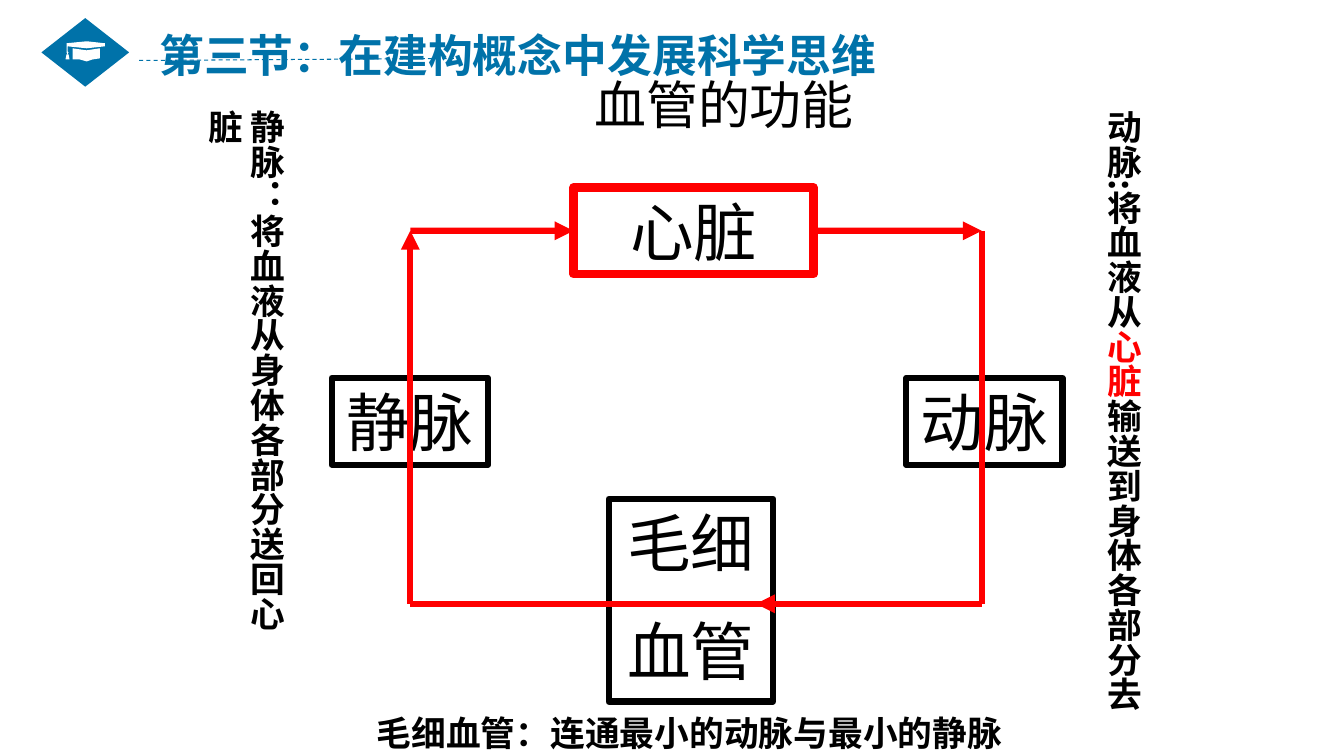
from lxml import etree
from pptx import Presentation
from pptx.dml.color import RGBColor
from pptx.enum.dml import MSO_LINE
from pptx.enum.shapes import MSO_CONNECTOR, MSO_SHAPE as SHAPE
from pptx.enum.text import MSO_ANCHOR as ANCHOR, MSO_AUTO_SIZE as FIT, PP_ALIGN as ALIGN
from pptx.oxml.ns import qn
from pptx.util import Inches, Pt

FONT = "Noto Sans CJK SC"
BLACK, RED, BLUE, WHITE = "000000", "FF0000", "0072A9", "FFFFFF"
W, H = Inches(13.333), Inches(7.5)

# Blood loop, in percent of the slide's width and height
LEFT, RIGHT, TOP, BOTTOM = 30.53, 73.05, 30.53, 79.87
# Graduation cap: body, board with tassel, tassel end (hundredths of an inch)
CAP = [
    [(72, 59), (79, 59), (86, 61), (92, 59), (99, 58), (99, 48), (86, 50), (72, 48)],
    [(104, 43), (104, 46), (86, 48), (67, 46), (67, 51), (68, 52), (67, 54),
     (66, 52), (66, 43), (86, 41)],
    [(68, 54), (66, 54), (65, 59), (69, 59)],
]


def color(value):
    return RGBColor.from_string(value)


def x(share):
    return round(W * share / 100)


def y(share):
    return round(H * share / 100)


def box_at(left, top, width, height):
    return x(left), y(top), x(width), y(height)


def add_run(p, text, size=24.8, fill=BLACK, bold=False):
    r = p.add_run()
    r.text = text
    font = r.font
    font.name, font.size, font.bold = FONT, Pt(size), bold
    font.color.rgb = color(fill)
    ea = etree.Element(qn("a:ea"), typeface=FONT)
    font._element.find(qn("a:latin")).addnext(ea)


def add_text(s, place, runs, vertical=False, indent=0.1, **fmt):
    """Text box with one paragraph; runs are (text, colour) pairs."""
    tf = s.shapes.add_textbox(*box_at(*place)).text_frame
    tf.word_wrap = True
    tf.auto_size = FIT.SHAPE_TO_FIT_TEXT
    tf.margin_left = Inches(indent)
    if vertical:
        tf._txBody.bodyPr.set("vert", "eaVert")
    for text, fill in runs:
        add_run(tf.paragraphs[0], text, fill=fill, **fmt)


def add_organ(s, place, lines, outline=BLACK, weight=4.5):
    sp = s.shapes.add_shape(SHAPE.RECTANGLE, *box_at(*place))
    sp.shadow.inherit = False
    sp.fill.background()
    sp.line.color.rgb = color(outline)
    sp.line.width = Pt(weight)
    tf = sp.text_frame
    tf.word_wrap = True
    tf.auto_size = FIT.SHAPE_TO_FIT_TEXT
    tf.vertical_anchor = ANCHOR.TOP
    for i, text in enumerate(lines):
        p = tf.add_paragraph() if i else tf.paragraphs[0]
        p.alignment = ALIGN.CENTER
        p.space_before = Pt(23 if i else 0)
        add_run(p, text, size=45.4)
    return sp


def add_line(s, start, end, fill=RED, weight=4.5, arrow=False, dash=None):
    cx = s.shapes.add_connector(
        MSO_CONNECTOR.STRAIGHT, x(start[0]), y(start[1]), x(end[0]), y(end[1]))
    cx.line.color.rgb = color(fill)
    cx.line.width = Pt(weight)
    if dash:
        cx.line.dash_style = dash
    if arrow:
        etree.SubElement(cx.line._get_or_add_ln(), qn("a:tailEnd"), type="triangle")
    etree.SubElement(cx._element.spPr, qn("a:effectLst"))
    return cx


def paint(sp, fill):
    sp.shadow.inherit = False
    sp.fill.solid()
    sp.fill.fore_color.rgb = color(fill)
    sp.line.fill.background()


def add_cap(s):
    fb = None
    for start, *rest in CAP:
        if fb is None:
            fb = s.shapes.build_freeform(*start, scale=Inches(0.01))
        else:
            fb.move_to(*start)
        fb.add_line_segments(rest, close=True)
    paint(fb.convert_to_shape(), WHITE)


def set_title(s, text):
    title = s.shapes.title
    title.left, title.top, title.width, title.height = box_at(27.3, 7.2, 50.6, 12.93)
    tf = title.text_frame
    tf.vertical_anchor = ANCHOR.MIDDLE
    tf.margin_left = Inches(0.44)
    p = tf.paragraphs[0]
    p.alignment = ALIGN.CENTER
    add_run(p, text, size=37.1)


def main():
    prs = Presentation()
    prs.slide_width, prs.slide_height = W, H
    s = prs.slides.add_slide(prs.slide_layouts[5])
    set_title(s, "血管的功能")

    # Organs
    heart = add_organ(s, (42.68, 24.8, 17.85, 11.47), ["心脏"], RED, 6)
    add_organ(s, (45.3, 66, 12.23, 26.8), ["毛细", "血管"])
    for left, name in ((67.43, "动脉"), (24.68, "静脉")):
        add_organ(s, (left, 50, 11.63, 11.47), [name])

    # Circulation loop
    out = add_line(s, (60.53, TOP), (RIGHT, TOP), arrow=True)
    out.begin_connect(heart, 3)
    add_line(s, (LEFT, BOTTOM), (RIGHT, BOTTOM))
    add_line(s, (LEFT, BOTTOM), (LEFT, TOP), arrow=True)
    add_line(s, (RIGHT, BOTTOM), (RIGHT, TOP))
    add_line(s, (61.43, BOTTOM), (56.25, BOTTOM), arrow=True)
    back = add_line(s, (LEFT, TOP), (42.68, TOP), arrow=True)
    back.end_connect(heart, 1)

    # Explanations
    add_text(s, (27.3, 93.47, 72.7, 6.93),
             [("毛细血管：连通最小的动脉与最小的静脉", BLACK)], bold=True)
    add_text(s, (80.85, 13.2, 4.65, 82.93),
             [("动脉:将血液从", BLACK), ("心脏", RED), ("输送到身体各部分去", BLACK)],
             vertical=True, bold=True)
    add_text(s, (17.1, 13.2, 4.65, 75.87),
             [("静脉：将血液从身体各部分送回心脏", BLACK)], vertical=True, bold=True)

    # Section heading
    paint(s.shapes.add_shape(SHAPE.DIAMOND, *box_at(3.08, 2.4, 6.53, 9.07)), BLUE)
    add_text(s, (9.6, 3.07, 70.65, 8.53), [("第三节：在建构概念中发展科学思维", BLUE)],
             indent=0.3, size=32, bold=True)
    add_line(s, (10.35, 8), (34.05, 7.73), BLUE, 0.75, dash=MSO_LINE.DASH)
    add_cap(s)

    prs.save("out.pptx")


if __name__ == "__main__":
    main()
